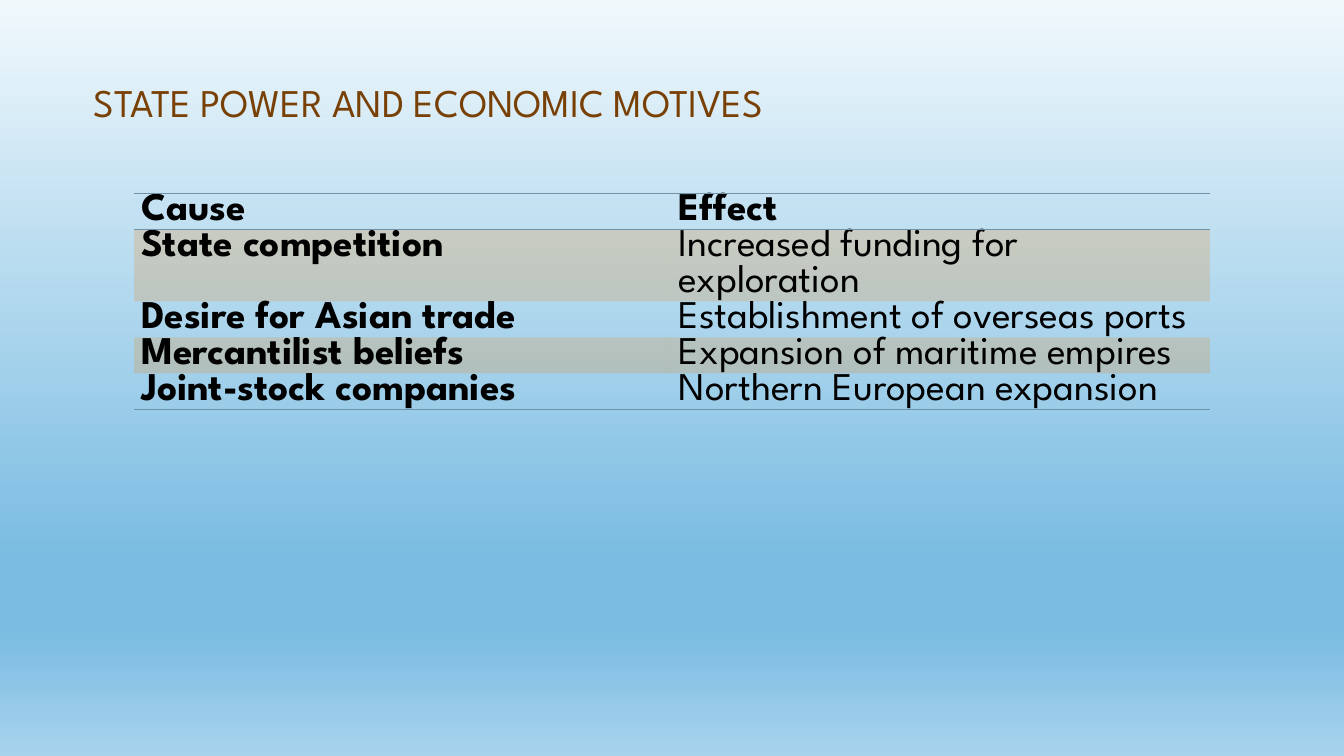
from pptx import Presentation
from pptx import util as u
from pptx.dml.color import RGBColor
from pptx.enum import text
from pptx.oxml import parse_xml
from pptx.oxml.ns import nsdecls, qn

FONT = "League Spartan"
NO_STYLE_TABLE = "{2D5ABB26-0587-4C30-8999-92F81FD0307C}"
SKY_STOPS = [(0, "F0F8FC"), (74, "7ABCE2"), (83, "7ABCE2"), (100, "A7D2EC")]
BAND, RULE = "F07F09", "7093A8"
ROW_HEIGHT = 0.35
ROWS = [
    ("Cause", "Effect"),
    ("State competition", "Increased funding for exploration"),
    ("Desire for Asian trade", "Establishment of overseas ports"),
    ("Mercantilist beliefs", "Expansion of maritime empires"),
    ("Joint-stock companies", "Northern European expansion"),
]


def rgb(value):
    return RGBColor.from_string(value)


def style_paragraph(paragraph, color, bold=False):
    font = paragraph.font
    font.name, font.size, font.bold = FONT, u.Pt(28), bold
    font.color.rgb = rgb(color)


def set_sky_background(slide):
    fill = slide.background.fill
    fill.gradient()
    fill.gradient_angle = 270
    stops = fill._fill._gradFill.find(qn("a:gsLst"))
    for stop in list(stops):
        stops.remove(stop)
    for position, color in SKY_STOPS:
        stops.append(parse_xml(
            f'<a:gs {nsdecls("a")} pos="{position * 1000}">'
            f'<a:srgbClr val="{color}"/></a:gs>'))


def set_title(slide, wording):
    title = slide.shapes.title
    title.left, title.top = u.Inches(0.83), u.Inches(0.42)
    title.width, title.height = u.Inches(11.67), u.Inches(0.88)
    frame = title.text_frame
    frame.text = wording
    frame.vertical_anchor = text.MSO_ANCHOR.BOTTOM
    frame.auto_size = text.MSO_AUTO_SIZE.NONE
    paragraph = frame.paragraphs[0]
    paragraph.alignment = text.PP_ALIGN.LEFT
    paragraph.line_spacing = 0.9
    style_paragraph(paragraph, "784004")


def add_rule(cell, edge):
    """Draw a thin line on one edge of a cell: lnT or lnB."""
    cell._tc.get_or_add_tcPr().append(parse_xml(
        f'<a:{edge} {nsdecls("a")} w="9525"><a:solidFill>'
        f'<a:srgbClr val="{RULE}"/></a:solidFill></a:{edge}>'))


def fill_cell(cell, banded):
    if not banded:
        cell.fill.background()
        return
    cell.fill.solid()
    cell.fill.fore_color.rgb = rgb(BAND)
    color = cell._tc.tcPr.find(qn("a:solidFill")).find(qn("a:srgbClr"))
    color.append(parse_xml(f'<a:alpha {nsdecls("a")} val="20000"/>'))


def add_cause_table(slide):
    last = len(ROWS) - 1
    frame = slide.shapes.add_table(
        len(ROWS), 2, u.Inches(1.33), u.Inches(1.92),
        u.Inches(10.67), u.Inches(ROW_HEIGHT * len(ROWS)))
    table = frame.table
    table._tbl.tblPr.find(qn("a:tableStyleId")).text = NO_STYLE_TABLE
    table.rows[1].height = u.Inches(2 * ROW_HEIGHT)
    for row, wordings in enumerate(ROWS):
        for column, wording in enumerate(wordings):
            cell = table.cell(row, column)
            cell.text = wording
            cell.margin_left = cell.margin_right = u.Inches(0.07)
            cell.margin_top = cell.margin_bottom = 0
            style_paragraph(cell.text_frame.paragraphs[0], "000000",
                            bold=row == 0 or column == 0)
            if row == 0:
                add_rule(cell, "lnT")
            if row in (0, last):
                add_rule(cell, "lnB")
            fill_cell(cell, banded=row % 2 == 1)


def main():
    presentation = Presentation()
    presentation.slide_width = u.Inches(13.33)
    presentation.slide_height = u.Inches(7.5)
    slide = presentation.slides.add_slide(presentation.slide_layouts[5])
    set_sky_background(slide)
    set_title(slide, "STATE POWER AND ECONOMIC MOTIVES")
    add_cause_table(slide)
    presentation.save("out.pptx")


if __name__ == "__main__":
    main()
